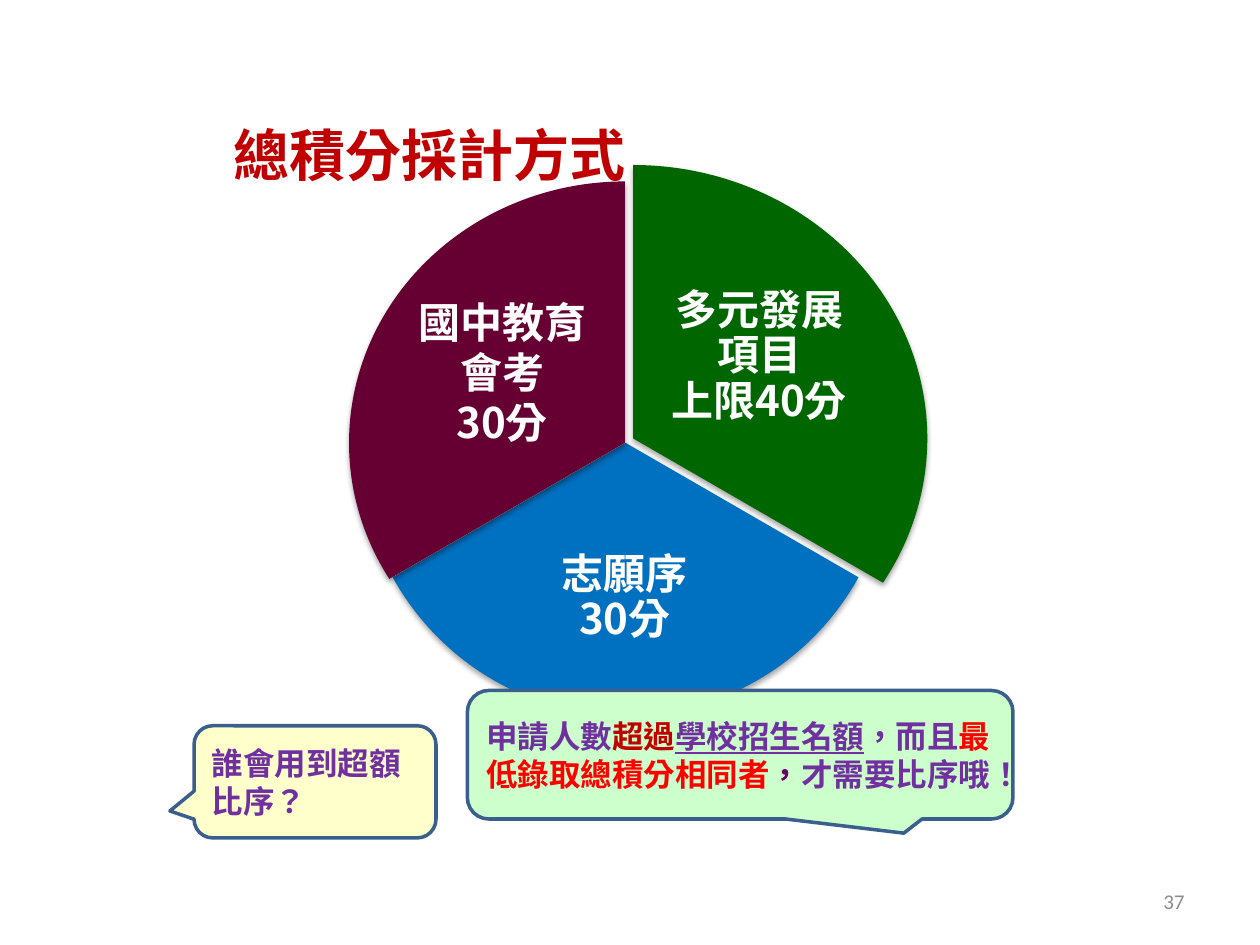
from dataclasses import dataclass

from lxml import etree
from pptx import Presentation, util as u
from pptx.dml.color import RGBColor
from pptx.enum import shapes, text
from pptx.oxml.ns import qn


@dataclass(frozen=True)
class Theme:
    font: str = "Noto Sans CJK SC"
    number_font: str = "Calibri"
    title_size: int = 32
    slice_size: int = 24
    callout_size: int = 18
    number_size: int = 12
    dark_red: str = "C00000"
    red: str = "FF0000"
    purple: str = "7030A0"
    plum: str = "660066"
    white: str = "FFFFFF"
    gray: str = "8C8C8C"
    outline: str = "3A5F8C"
    green: str = "006600"
    blue: str = "0070C0"
    maroon: str = "660033"
    pale_green: str = "CCFFCC"
    pale_yellow: str = "FFFFCC"


THEME = Theme()
ALIGN = text.PP_ALIGN
QUARTER, DEGREE = 90, 0.6  # a pie adjustment of 0.6 is one degree


def inches(box):
    return [u.Inches(value) for value in box]


def paint(shape, color):
    shape.shadow.inherit = False
    shape.fill.solid()
    shape.fill.fore_color.rgb = RGBColor.from_string(color)


def add_span(para, words, size, color, bold=True, underline=None, font=THEME.font):
    span = para.add_run()
    span.text = words
    span.font.name = font
    span.font.size = u.Pt(size)
    span.font.bold = bold
    span.font.underline = underline
    span.font.color.rgb = RGBColor.from_string(color)
    properties = span._r.get_or_add_rPr()
    properties.set("lang", "zh-TW")
    east_asian = etree.Element(qn("a:ea"), typeface=font)
    properties.find(qn("a:latin")).addnext(east_asian)


def set_frame(shape, inset=None):
    frame = shape.text_frame
    frame.word_wrap = True
    frame.auto_size = text.MSO_AUTO_SIZE.NONE
    frame.vertical_anchor = text.MSO_ANCHOR.MIDDLE
    if inset is not None:
        frame.margin_left = frame.margin_right = u.Inches(inset)
        frame.margin_top = frame.margin_bottom = u.Inches(inset)
    return frame


def add_soft_shadow(shape):
    effects = shape._element.spPr.find(qn("a:effectLst"))
    shadow = etree.SubElement(
        effects, qn("a:outerShdw"), blurRad=str(u.Pt(3.1)), dist=str(u.Pt(1.8)),
        dir="5400000", rotWithShape="0")
    color = etree.SubElement(shadow, qn("a:srgbClr"), val="000000")
    etree.SubElement(color, qn("a:alpha"), val="35000")


def place_title(page, box, words):
    title = page.shapes.title
    title.left, title.top, title.width, title.height = inches(box)
    para = set_frame(title).paragraphs[0]
    para.alignment = ALIGN.CENTER
    add_span(para, words, THEME.title_size, THEME.dark_red)


def add_slice(group, box, angles, color, label_box, lines, spacing):
    """Draw one sector; angles run clockwise in degrees from the right."""
    sector = group.shapes.add_shape(shapes.MSO_SHAPE.PIE, *inches(box))
    for index, angle in enumerate(angles):
        sector.adjustments[index] = angle * DEGREE
    paint(sector, color)
    sector.line.fill.background()
    add_soft_shadow(sector)

    frame = set_frame(group.shapes.add_textbox(*inches(label_box)), inset=0.03)
    for index, line in enumerate(lines):
        para = frame.add_paragraph() if index else frame.paragraphs[0]
        para.alignment = ALIGN.CENTER
        para.line_spacing = spacing
        add_span(para, line, THEME.slice_size, THEME.white)


def add_score_pie(page):
    group = page.shapes.add_group_shape()
    add_slice(group, (2.69, 1.31, 4.67, 4.34), (270, 30), THEME.green,
              (5.23, 2.11, 1.59, 1.45), ("多元發展", "項目", "上限40分"), 0.9)
    add_slice(group, (2.84, 1.35, 4.25, 4.33), (30, 150), THEME.blue,
              (4, 4.08, 1.92, 1.34), ("志願序", "30分"), 0.9)
    add_slice(group, (2.77, 1.44, 4.38, 4.15), (150, 270), THEME.maroon,
              (3.24, 2.26, 1.49, 1.38), ("國中教育", "會考", "30分"), 1.0)


def add_callout(page, box, pointer, color, spans):
    """Add a speech bubble; each span is (words, color, underline)."""
    callout = page.shapes.add_shape(
        shapes.MSO_SHAPE.ROUNDED_RECTANGULAR_CALLOUT, *inches(box))
    for index, value in enumerate(pointer):
        callout.adjustments[index] = value
    paint(callout, color)
    callout.line.color.rgb = RGBColor.from_string(THEME.outline)
    callout.line.width = u.Pt(2)
    para = set_frame(callout).paragraphs[0]
    para.alignment = ALIGN.LEFT
    for words, span_color, underline in spans:
        add_span(para, words, THEME.callout_size, span_color, underline=underline)


def add_page_number(page, box, number):
    para = set_frame(page.shapes.add_textbox(*inches(box))).paragraphs[0]
    para.alignment = ALIGN.RIGHT
    add_span(para, number, THEME.number_size, THEME.gray, bold=False,
             font=THEME.number_font)


def main():
    deck = Presentation()
    deck.slide_width, deck.slide_height = u.Inches(10), u.Inches(7.5)
    page = deck.slides.add_slide(deck.slide_layouts.get_by_name("Title Only"))
    place_title(page, (0.4, 0.76, 6.02, 0.93), "總積分採計方式")
    add_score_pie(page)
    add_callout(page, (3.71, 5.48, 4.33, 1.02), (0.3, 0.61), THEME.pale_green, (
        ("申請人數", THEME.purple, None),
        ("超過", THEME.dark_red, None),
        ("學校招生名額", THEME.purple, True),
        ("，而且", THEME.purple, None),
        ("最低錄取總積分相同者", THEME.red, None),
        ("，", THEME.plum, None),
        ("才需要比序哦！", THEME.purple, None),
    ))
    add_callout(page, (1.54, 5.76, 1.92, 0.89), (-0.6, 0.26), THEME.pale_yellow,
                (("誰會用到超額比序？", THEME.purple, None),))
    add_page_number(page, (7.17, 6.95, 2.33, 0.4), "37")
    deck.save("out.pptx")


if __name__ == "__main__":
    main()
